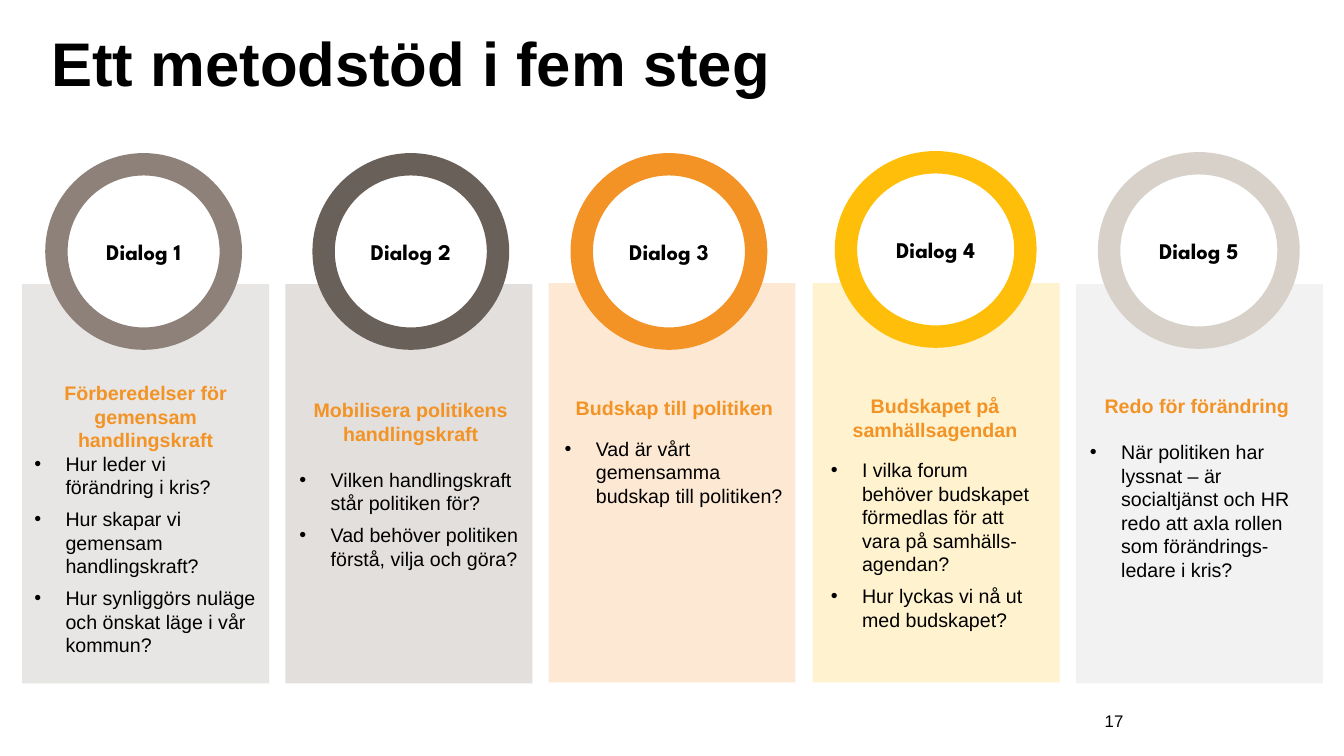
import pptx
import pptx.util
import pptx.dml.color
import pptx.enum.shapes
import pptx.enum.text
import lxml.etree
import pptx.oxml.ns

PX = 9144
ALIGN = pptx.enum.text.PP_ALIGN
ANCHOR = pptx.enum.text.MSO_ANCHOR
SHAPE = pptx.enum.shapes.MSO_SHAPE


def color(text):
    return pptx.dml.color.RGBColor.from_string(text)


def write(frame, text, size=14, font="Arial", ink="000000", bold=False,
          align=ALIGN.LEFT, after=0, left=0, hang=0, line=None):
    para = frame.paragraphs[0] if not frame.text else frame.add_paragraph()
    para.alignment = align
    para.space_before = pptx.util.Pt(0)
    para.space_after = pptx.util.Pt(after)
    para.line_spacing = line
    props = para._p.get_or_add_pPr()
    props.set("marL", str(left * PX))
    props.set("indent", str(-hang * PX))
    if hang:
        mark = lxml.etree.SubElement(props, pptx.oxml.ns.qn("a:buFont"))
        mark.set("typeface", "Arial")
        mark = lxml.etree.SubElement(props, pptx.oxml.ns.qn("a:buChar"))
        mark.set("char", "•")
    run = para.add_run()
    run.text = text
    run.font.size = pptx.util.Pt(size)
    run.font.name = font
    run.font.bold = bold
    run.font.color.rgb = color(ink)


deck = pptx.Presentation()
deck.slide_width = 1333 * PX
deck.slide_height = 750 * PX
slide = deck.slides.add_slide(deck.slide_layouts[5])
shapes = slide.shapes

title = shapes.title
title.left, title.top, title.width, title.height = [n * PX for n in (41, 25, 1339, 135)]
title.text_frame.vertical_anchor = ANCHOR.TOP
title.text_frame.auto_size = pptx.enum.text.MSO_AUTO_SIZE.NONE
write(title.text_frame, "Ett metodstöd i fem steg", size=44, bold=True, line=0.95)

number = shapes.add_textbox(985 * PX, 695 * PX, 139 * PX, 40 * PX).text_frame
number.word_wrap = True
number.vertical_anchor = ANCHOR.MIDDLE
write(number, "17", size=12, align=ALIGN.RIGHT)

steps = [
    dict(panel="E8E6E4", top=282, ring="8D8179", disc=(56, 163, 173),
         box=(22, 366, 245, 332), gap=0, after=6, inset=0, left=31,
         head="Förberedelser för gemensam handlingskraft",
         points=["Hur leder vi förändring i kris?",
                 "Hur skapar vi gemensam handlingskraft?",
                 "Hur synliggörs nuläge och önskat läge i vår kommun?"]),
    dict(panel="E2DFDD", top=282, ring="6A605A", disc=(321, 163, 173),
         box=(281, 383, 253, 197), gap=16, after=6, inset=0, left=35,
         head="Mobilisera politikens handlingskraft",
         points=["Vilken handlingskraft står politiken för?",
                 "Vad behöver politiken förstå, vilja och göra?"]),
    dict(panel="FDE9D3", top=281, ring="F39325", disc=(577, 163, 173),
         box=(544, 381, 247, 135), gap=12, after=12, inset=3, left=35,
         head="Budskap till politiken",
         points=["Vad är vårt gemensamma budskap till politiken?"]),
    dict(panel="FFF2CE", top=281, ring="FFBE0A", disc=(839, 161, 178),
         box=(808, 379, 236, 261), gap=12, after=6, inset=3, left=35,
         head="Budskapet på samhällsagendan",
         points=["I vilka forum behöver budskapet förmedlas för att vara på samhälls-agendan?",
                 "Hur lyckas vi nå ut med budskapet?"]),
    dict(panel="F2F2F2", top=282, ring="D7D1CA", disc=(1100, 162, 178),
         box=(1065, 379, 241, 330), gap=16, after=0, inset=3, left=35,
         head="Redo för förändring",
         points=["När politiken har lyssnat – är socialtjänst och HR redo att axla "
                 "rollen som förändrings-ledare i kris?"]),
]

for i, step in enumerate(steps):
    x = 22 + round(i * 261.25)
    panel = shapes.add_shape(SHAPE.RECTANGLE, x * PX, step["top"] * PX, 245 * PX, 396 * PX)
    panel.shadow.inherit = False
    panel.fill.solid()
    panel.fill.fore_color.rgb = color(step["panel"])
    panel.line.fill.background()

    x, y, wide = step["disc"]
    ring = shapes.add_shape(SHAPE.FLOWCHART_CONNECTOR, x * PX, y * PX, wide * PX, 173 * PX)
    ring.shadow.inherit = False
    ring.fill.solid()
    ring.fill.fore_color.rgb = color("FFFFFF")
    ring.line.color.rgb = color(step["ring"])
    ring.line.width = pptx.util.Pt(16)
    ring.text_frame.vertical_anchor = ANCHOR.MIDDLE
    write(ring.text_frame, f"Dialog {i + 1}", size=16, font="League Spartan",
          bold=True, align=ALIGN.CENTER)

    body = shapes.add_textbox(*[n * PX for n in step["box"]]).text_frame
    body.word_wrap = True
    body.margin_left = body.margin_right = 12 * PX
    body.margin_top = body.margin_bottom = 12 * PX
    write(body, step["head"], ink="F39325", bold=True, align=ALIGN.CENTER,
          after=step["gap"], left=step["inset"])
    for point in step["points"]:
        write(body, point, after=step["after"], left=step["left"], hang=31)

deck.save("out.pptx")
